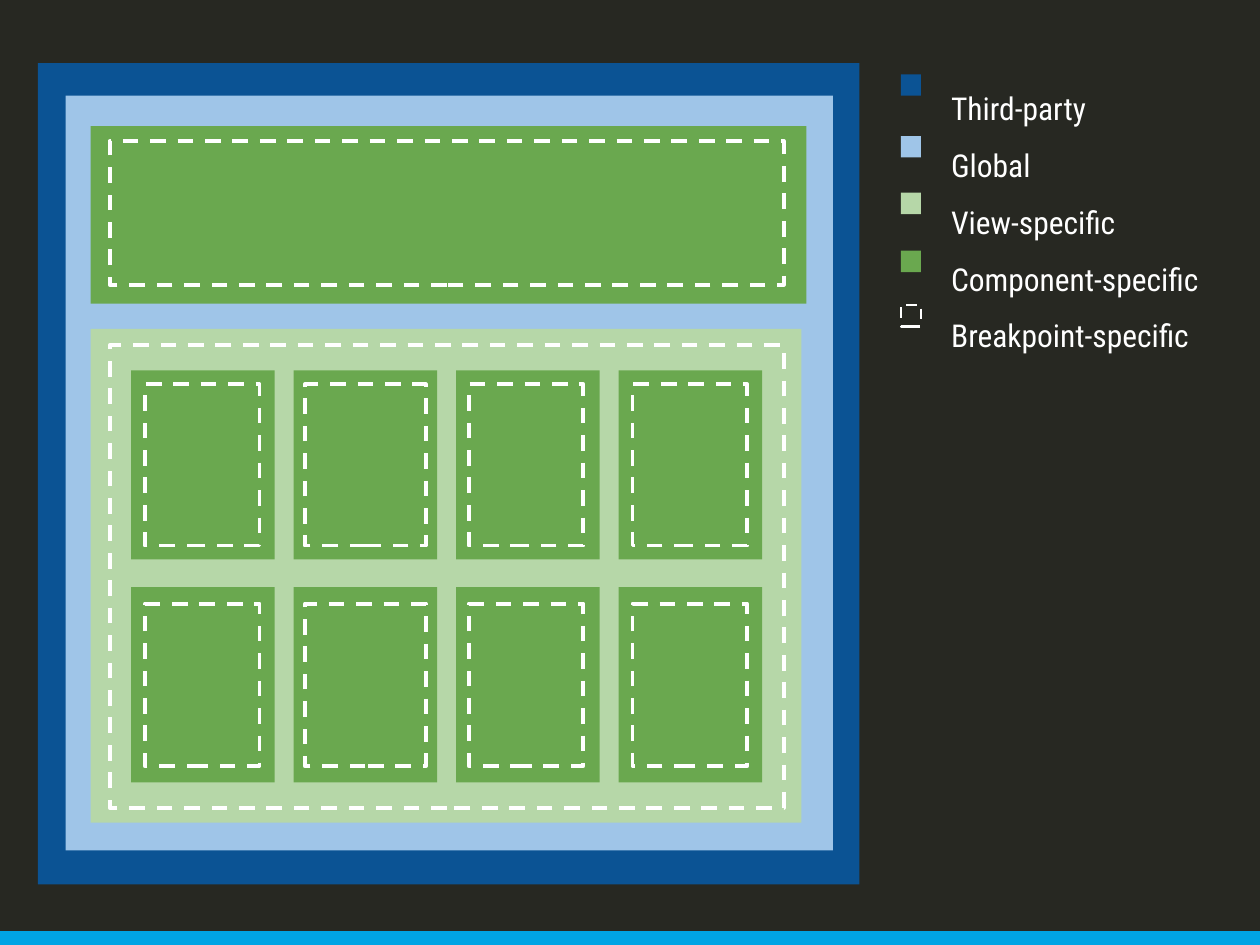
import pptx
import pptx.dml.color
import pptx.enum.dml
import pptx.enum.shapes
import pptx.enum.text
import pptx.util

Inches = pptx.util.Inches
RGBColor = pptx.dml.color.RGBColor

CHARCOAL = RGBColor(0x27, 0x28, 0x22)
CYAN = RGBColor(0x00, 0xA4, 0xE4)
THIRD_PARTY = RGBColor(0x0B, 0x53, 0x94)
GLOBAL = RGBColor(0x9F, 0xC5, 0xE8)
VIEW = RGBColor(0xB6, 0xD7, 0xA8)
COMPONENT = RGBColor(0x6A, 0xA8, 0x4F)
WHITE = RGBColor(0xFF, 0xFF, 0xFF)

LEGEND = [
    ("Third-party", THIRD_PARTY, 0.59),
    ("Global", GLOBAL, 1.08),
    ("View-specific", VIEW, 1.53),
    ("Component-specific", COMPONENT, 1.99),
    ("Breakpoint-specific", None, 2.42),
]
CARD_LEFT, CARD_PITCH, CARD_WIDTH = 1.04, 1.29, 1.14
CARD_ROWS = [(2.94, 1.5), (4.66, 1.55)]
BREAKPOINT_COLUMNS = [(1.15, 0.91), (2.42, 0.96), (3.72, 0.91), (5.02, 0.91)]
BREAKPOINT_ROWS = [(3.05, 1.28), (4.79, 1.29)]


class LayerDiagram:
    """Draws style layers and their legend on one slide."""

    font_name = "Roboto Condensed"
    font_size = pptx.util.Pt(18)
    line_spacing = 1.5

    def __init__(self, slide):
        self.slide = slide

    def rectangle(self, left, top, width, height):
        shape = self.slide.shapes.add_shape(
            pptx.enum.shapes.MSO_SHAPE.RECTANGLE,
            Inches(left), Inches(top), Inches(width), Inches(height))
        shape.shadow.inherit = False
        return shape

    def layer(self, left, top, width, height, color):
        shape = self.rectangle(left, top, width, height)
        shape.fill.solid()
        shape.fill.fore_color.rgb = color
        shape.line.fill.background()

    def breakpoint_frame(self, left, top, width, height, weight=2.25):
        shape = self.rectangle(left, top, width, height)
        shape.fill.background()
        shape.line.color.rgb = WHITE
        shape.line.width = pptx.util.Pt(weight)
        shape.line.dash_style = pptx.enum.dml.MSO_LINE.DASH

    def labels(self, left, top, width, height, lines):
        box = self.slide.shapes.add_textbox(
            Inches(left), Inches(top), Inches(width), Inches(height))
        text_frame = box.text_frame
        text_frame.word_wrap = True
        text_frame.vertical_anchor = pptx.enum.text.MSO_ANCHOR.TOP
        text_frame.margin_left = text_frame.margin_right = Inches(0.1)
        text_frame.margin_top = text_frame.margin_bottom = Inches(0.1)
        text_frame.text = "\n".join(lines)
        for paragraph in text_frame.paragraphs:
            paragraph.line_spacing = self.line_spacing
            for run in paragraph.runs:
                run.font.name = self.font_name
                run.font.size = self.font_size
                run.font.color.rgb = WHITE


def main():
    presentation = pptx.Presentation()
    presentation.slide_width = Inches(10)
    presentation.slide_height = Inches(7.5)
    slide = presentation.slides.add_slide(presentation.slide_layouts[6])
    diagram = LayerDiagram(slide)

    diagram.layer(-0.02, -0.02, 10.06, 7.5, CHARCOAL)
    diagram.layer(-0.02, 7.39, 10.1, 0.17, CYAN)

    diagram.layer(0.3, 0.5, 6.52, 6.52, THIRD_PARTY)
    diagram.layer(0.52, 0.76, 6.09, 5.99, GLOBAL)
    diagram.layer(0.72, 1, 5.68, 1.41, COMPONENT)
    diagram.layer(0.72, 2.61, 5.64, 3.92, VIEW)
    for top, height in CARD_ROWS:
        for column in range(4):
            left = CARD_LEFT + column * CARD_PITCH
            diagram.layer(left, top, CARD_WIDTH, height, COMPONENT)

    diagram.labels(7.45, 0.46, 2.35, 5.61, [label for label, _, _ in LEGEND])
    for _, color, top in LEGEND:
        if color is None:
            diagram.breakpoint_frame(7.15, top, 0.16, 0.17, weight=1.5)
        else:
            diagram.layer(7.15, top, 0.16, 0.17, color)

    diagram.breakpoint_frame(0.87, 1.12, 5.35, 1.14)
    for top, height in BREAKPOINT_ROWS:
        for left, width in BREAKPOINT_COLUMNS:
            diagram.breakpoint_frame(left, top, width, height)
    diagram.breakpoint_frame(0.87, 2.74, 5.35, 3.67)

    presentation.save("out.pptx")


if __name__ == "__main__":
    main()
